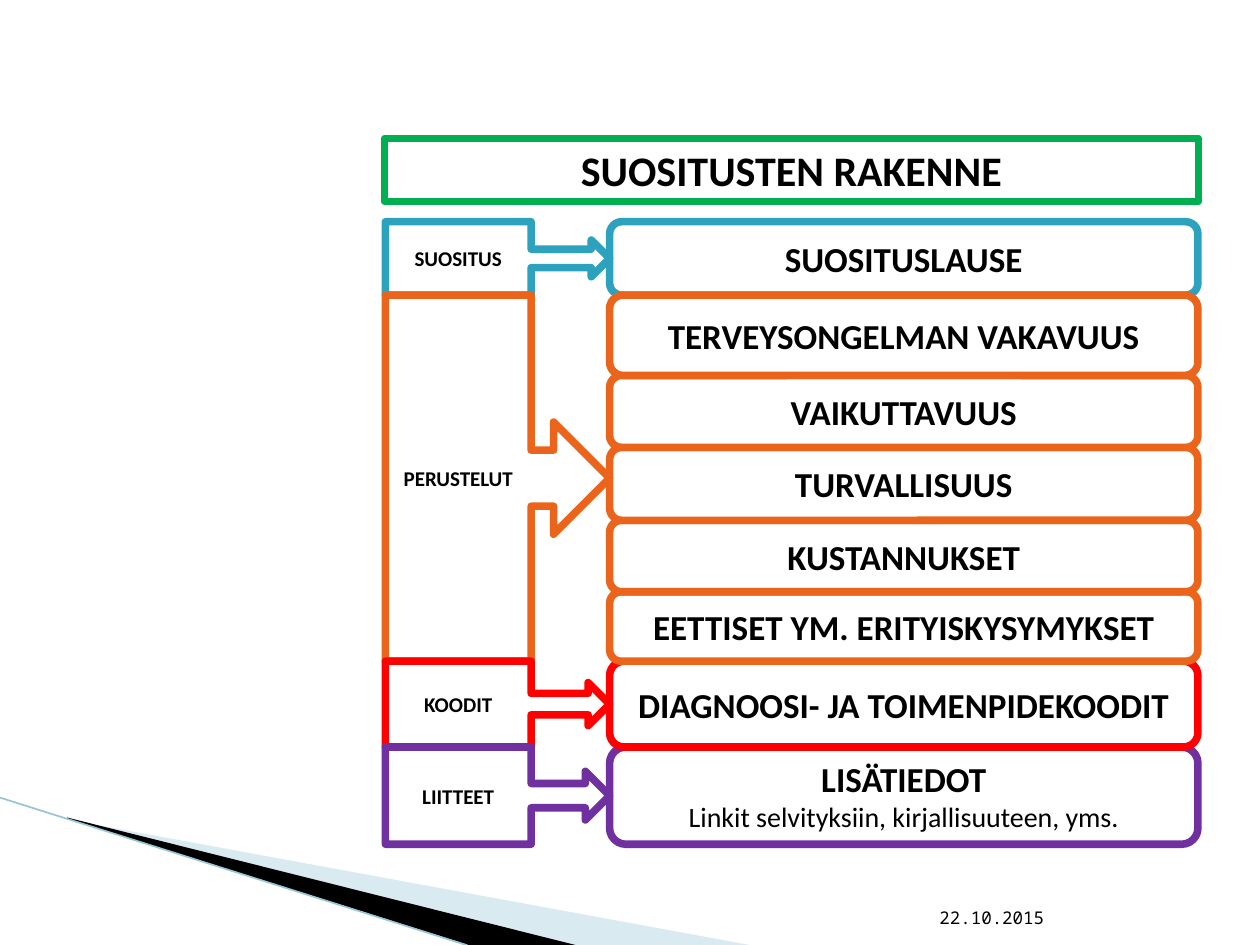
from dataclasses import dataclass
from itertools import accumulate

import pptx
import pptx.dml.color
import pptx.enum.shapes
import pptx.enum.text
import pptx.oxml.ns
import pptx.oxml.xmlchemy
import pptx.util
from pptx.util import Cm

COLORS = {
    "white": "FFFFFF", "black": "000000", "green": "00B050", "blue": "2DA2BF",
    "orange": "EB641B", "red": "FF0000", "purple": "7030A0",
    "pale": "A0CBDC", "edge": "97C5D8",
}
TOP = 4.47
CALLOUT_LEFT, CALLOUT_WIDTH = 7.77, 4.52
BOX_LEFT, BOX_WIDTH = 12.29, 11.86
SHAPES = pptx.enum.shapes.MSO_SHAPE
ANCHOR = pptx.enum.text.MSO_ANCHOR


@dataclass
class Row:
    text: str
    color: str
    height: float
    detail: str = ""


@dataclass
class Group:
    text: str
    color: str
    first: int
    last: int


ROWS = [
    Row("SUOSITUSLAUSE", "blue", 1.48),
    Row("TERVEYSONGELMAN VAKAVUUS", "orange", 1.62),
    Row("VAIKUTTAVUUS", "orange", 1.45),
    Row("TURVALLISUUS", "orange", 1.47),
    Row("KUSTANNUKSET", "orange", 1.44),
    Row("EETTISET YM. ERITYISKYSYMYKSET", "orange", 1.4),
    Row("DIAGNOOSI- JA TOIMENPIDEKOODIT", "red", 1.73),
    Row("LISÄTIEDOT", "purple", 1.96, "Linkit selvityksiin, kirjallisuuteen, yms."),
]
GROUPS = [
    Group("SUOSITUS", "blue", 0, 0),
    Group("PERUSTELUT", "orange", 1, 5),
    Group("KOODIT", "red", 6, 6),
    Group("LIITTEET", "purple", 7, 7),
]
TOPS = list(accumulate((row.height for row in ROWS), initial=TOP))


def rgb(name: str) -> pptx.dml.color.RGBColor:
    return pptx.dml.color.RGBColor.from_string(COLORS[name])


def write(para, text: str, size: float, bold: bool = True, font: str = "Calibri",
          align=pptx.enum.text.PP_ALIGN.CENTER) -> None:
    para.alignment = align
    span = para.add_run()
    span.text = text
    formats = {"name": font, "size": pptx.util.Pt(size), "bold": bold}
    for key, value in formats.items():
        setattr(span.font, key, value)
    span.font.color.rgb = rgb("black")


def place(shape, left: float, top: float, width: float, height: float) -> None:
    bounds = {"left": left, "top": top, "width": width, "height": height}
    for key, value in bounds.items():
        setattr(shape, key, Cm(value))


def frame(shape, color: str) -> None:
    """White fill, thick coloured outline, text in the middle."""
    shape.fill.solid()
    shape.fill.fore_color.rgb = rgb("white")
    shape.line.color.rgb = rgb(color)
    shape.line.width = pptx.util.Pt(4.33)
    shape.text_frame.vertical_anchor = ANCHOR.MIDDLE
    shape.text_frame.word_wrap = True


def add_framed(page, kind, bounds: tuple, color: str):
    box = page.shapes.add_shape(kind, *map(Cm, bounds))
    box.shadow.inherit = False
    frame(box, color)
    return box


def add_row(page, row: Row, top: float) -> None:
    box = add_framed(page, SHAPES.ROUNDED_RECTANGLE,
                     (BOX_LEFT, top, BOX_WIDTH, row.height), row.color)
    write(box.text_frame.paragraphs[0], row.text, 20)
    if row.detail:
        write(box.text_frame.add_paragraph(), row.detail, 16, bold=False)


def add_group(page, group: Group) -> None:
    top, bottom = TOPS[group.first], TOPS[group.last + 1]
    box = add_framed(page, SHAPES.RIGHT_ARROW_CALLOUT,
                     (CALLOUT_LEFT, top, CALLOUT_WIDTH, bottom - top), group.color)
    for index, value in enumerate((0.25, 0.25, 0.25, 0.65)):
        box.adjustments[index] = value
    write(box.text_frame.paragraphs[0], group.text, 12)


def add_wedge(page, points: list, color: str, alpha: int = 100) -> None:
    corners = [(Cm(x), Cm(y)) for x, y in points]
    builder = page.shapes.build_freeform(*corners[0])
    builder.add_line_segments(corners[1:], close=True)
    wedge = builder.convert_to_shape()
    wedge.shadow.inherit = False
    wedge.line.fill.background()
    wedge.fill.solid()
    wedge.fill.fore_color.rgb = rgb(color)
    if alpha < 100:
        tint = wedge._element.spPr.find(".//" + pptx.oxml.ns.qn("a:srgbClr"))
        opacity = pptx.oxml.xmlchemy.OxmlElement("a:alpha")
        opacity.set("val", str(alpha * 1000))
        tint.append(opacity)


def add_corner(page) -> None:
    """Pale and black wedges with a thin edge line, bottom left."""
    add_wedge(page, [(1.4, 16.53), (15.11, 19.05), (11.58, 19.05), (1.4, 16.51)], "pale", 40)
    add_wedge(page, [(1.35, 16.48), (11.6, 19.05), (9.45, 19.05), (1.37, 16.51)], "black")
    edge = page.shapes.add_connector(pptx.enum.shapes.MSO_CONNECTOR.STRAIGHT,
                                     Cm(0), Cm(16.08), Cm(9.4), Cm(19.05))
    edge.line.color.rgb = rgb("edge")
    edge.line.width = pptx.util.Pt(0.95)
    edge._element.spPr.append(pptx.oxml.xmlchemy.OxmlElement("a:effectLst"))


def add_date(page) -> None:
    box = page.shapes.add_textbox(Cm(18.69), Cm(17.81), Cm(5.33), Cm(1.02))
    box.text_frame.word_wrap = True
    box.text_frame.vertical_anchor = ANCHOR.BOTTOM
    write(box.text_frame.paragraphs[0], "22.10.2015", 10, False, "Noto Sans Mono",
          pptx.enum.text.PP_ALIGN.LEFT)


def main() -> None:
    deck = pptx.Presentation()
    deck.slide_width, deck.slide_height = Cm(25.4), Cm(19.05)
    page = deck.slides.add_slide(deck.slide_layouts.get_by_name("Title Only"))

    title = page.shapes.title
    place(title, 7.75, 2.79, 16.41, 1.27)
    frame(title, "green")
    write(title.text_frame.paragraphs[0], "SUOSITUSTEN RAKENNE", 24)

    add_corner(page)
    add_date(page)
    placed = list(zip(ROWS, TOPS))
    # Lower rows go behind upper ones, except the first row, which is at the back.
    for row, top in placed[:1] + placed[:0:-1]:
        add_row(page, row, top)
    for group in GROUPS:
        add_group(page, group)
    deck.save("out.pptx")


if __name__ == "__main__":
    main()
